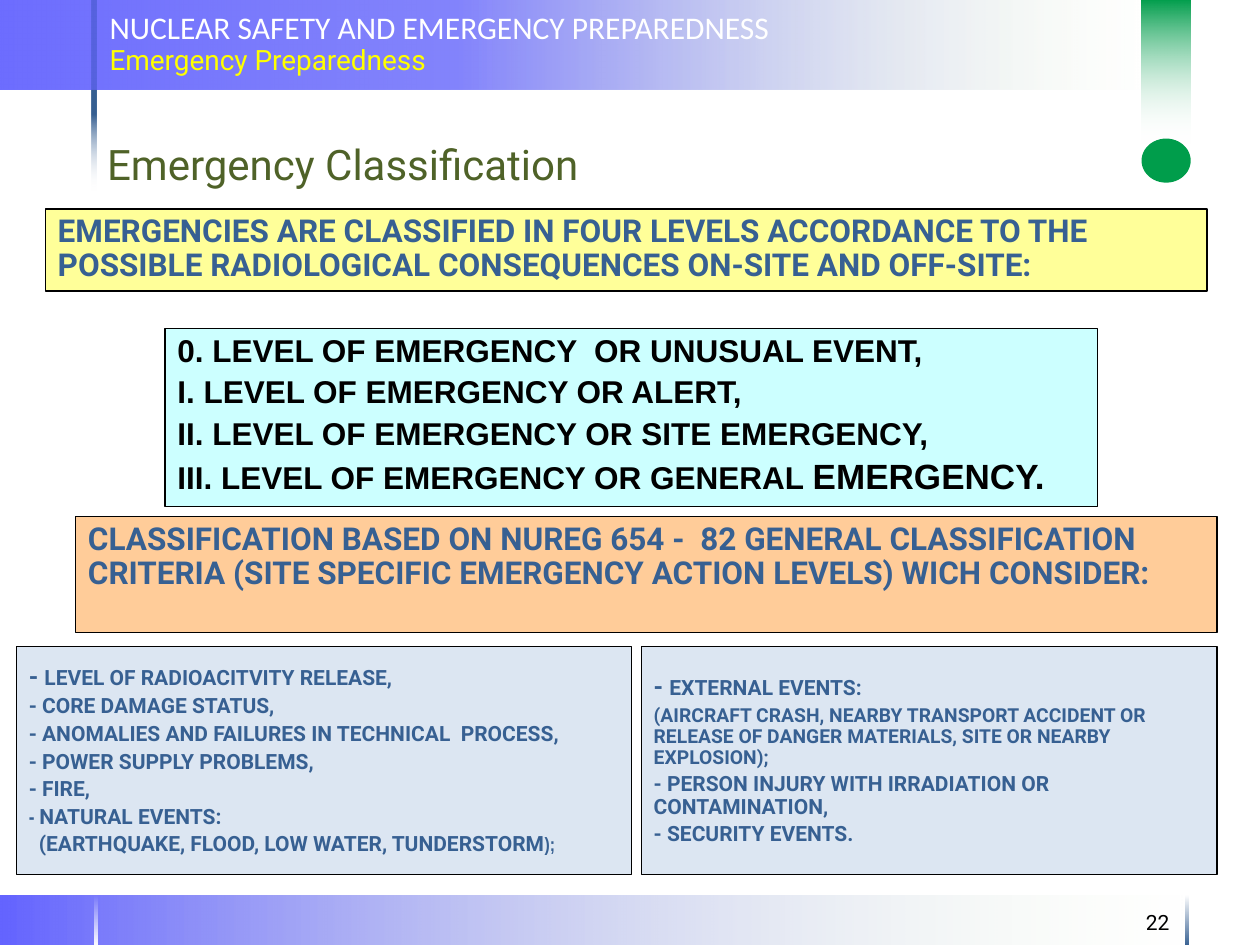
from lxml import etree
from pptx import Presentation
from pptx.dml.color import RGBColor
from pptx.enum.shapes import MSO_SHAPE
from pptx.enum.text import MSO_ANCHOR, PP_ALIGN
from pptx.oxml.ns import qn
from pptx.util import Inches, Pt

RECT, OVAL = MSO_SHAPE.RECTANGLE, MSO_SHAPE.OVAL
TOP, MIDDLE, BOTTOM = MSO_ANCHOR.TOP, MSO_ANCHOR.MIDDLE, MSO_ANCHOR.BOTTOM
LEFT, RIGHT = PP_ALIGN.LEFT, PP_ALIGN.RIGHT
COLORS = {
    "violet": "6464FF", "mist": "E1F1CF", "white": "FFFFFF", "navy": "376092",
    "green": "009D4B", "olive": "4F6228", "yellow": "FFFF00", "black": "000000",
    "pale_blue": "DCE6F2", "cream": "FFFF99", "peach": "FFCC99", "aqua": "CCFFFF",
}
DOWN, UP, ACROSS = 90, 270, 0


def rgb(name):
    return RGBColor.from_string(COLORS[name])


def place(shape, box):
    shape.left, shape.top, shape.width, shape.height = (Inches(side) for side in box)


def write_text(shape, paragraphs, size=12, font="Roboto", color="navy", bold=False,
               align=LEFT, anchor=TOP, spacing=1.0, gap=0, insets=(0.1, 0.05, 0.1, 0.05)):
    """Each paragraph is a list of (text, overrides) spans; 'indent' is in inches."""
    frame = shape.text_frame
    frame.word_wrap = True
    frame.vertical_anchor = anchor
    (frame.margin_left, frame.margin_top,
     frame.margin_right, frame.margin_bottom) = (Inches(side) for side in insets)
    for index, spans in enumerate(paragraphs):
        para = frame.paragraphs[0] if index == 0 else frame.add_paragraph()
        para.alignment, para.line_spacing = align, spacing
        para.space_before = Pt(gap if index else 0)
        for text, changes in spans:
            if "indent" in changes:
                para._p.get_or_add_pPr().set("marL", str(Inches(changes["indent"])))
            span = para.add_run()
            span.text = text
            span.font.size = Pt(changes.get("size", size))
            span.font.name = changes.get("font", font)
            span.font.bold = bold
            span.font.color.rgb = rgb(changes.get("color", color))


def add_block(page, box, fill, outlined=False, kind=RECT):
    shape = page.shapes.add_shape(kind, *(Inches(side) for side in box))
    shape.shadow.inherit = False
    shape.fill.solid()
    shape.fill.fore_color.rgb = rgb(fill)
    if outlined:
        shape.line.color.rgb = rgb("black")
        shape.line.width = Pt(0.75)
    else:
        shape.line.fill.background()
    return shape


def add_gradient(page, box, angle, *stops):
    """Each stop is (position, color, opacity), in percent."""
    shape = add_block(page, box, "white")
    solid = shape._element.spPr.find(qn("a:solidFill"))
    gradient = etree.Element(qn("a:gradFill"), rotWithShape="1")
    stop_list = etree.SubElement(gradient, qn("a:gsLst"))
    for position, color, opacity in stops:
        stop = etree.SubElement(stop_list, qn("a:gs"), pos=str(position * 1000))
        tint = etree.SubElement(stop, qn("a:srgbClr"), val=COLORS[color])
        etree.SubElement(tint, qn("a:alpha"), val=str(opacity * 1000))
    etree.SubElement(gradient, qn("a:lin"), ang=str(angle * 60000), scaled="0")
    solid.getparent().replace(solid, gradient)
    return shape


def add_header(page, box):
    left, top, width, height = box
    add_gradient(page, box, ACROSS, (0, "violet", 80), (100, "mist", 0))
    add_gradient(page, (left + 0.73, top, 0.04, 1.51), DOWN,
                 (60, "navy", 100), (100, "white", 0))
    add_gradient(page, (left + width, top, 0.39, 1.14), UP,
                 (0, "white", 0), (100, "green", 100))
    # Plain emblem under the green ribbon
    add_block(page, (left + width, top + 1.1, 0.39, 0.35), "green", kind=OVAL)
    band = add_gradient(page, box, ACROSS, (40, "violet", 70), (100, "mist", 0))
    write_text(band, [
        [("NUCLEAR SAFETY AND EMERGENCY PREPAREDNESS",
          {"size": 18, "font": "Calibri", "color": "white"})],
        [("Emergency Preparedness", {"color": "yellow"})],
    ], size=16, anchor=MIDDLE, spacing=0.9, insets=(0.87, 0.05, 0.1, 0.05))


def add_footer(page, box, number):
    left, top, width, height = box
    add_gradient(page, box, ACROSS, (0, "violet", 100), (100, "mist", 0))
    for offset, color in ((0.75, "white"), (width, "navy")):
        add_gradient(page, (left + offset, top, 0.02, height), DOWN,
                     (0, color, 0), (100, color, 100))
    holder = page.shapes.add_textbox(0, 0, 0, 0)
    place(holder, (left + width - 1.46, top + 0.03, 1.43, 0.36))
    write_text(holder, [[(number, {})]], color="black", align=RIGHT, anchor=MIDDLE,
               insets=(0.1, 0, 0.1, 0))


def add_title(page, box, text):
    place(page.shapes.title, box)
    write_text(page.shapes.title, [[(text, {})]], size=24, color="olive", anchor=BOTTOM)


def add_panel(page, box, fill, paragraphs, **text_format):
    panel = add_block(page, box, fill, outlined=True)
    write_text(panel, paragraphs, bold=True, spacing=0.9, **text_format)


def add_criteria(page, box):
    left, top, width, height = box
    left_width, gutter = 4.88, 0.08
    dash = ("- ", {"size": 14})
    narrow = {"font": "Arial Narrow"}
    plant_events = [
        [dash, ("LEVEL OF RADIOACITVITY RELEASE,", {})],
        [("- CORE DAMAGE STATUS,", {})],
        [("- ANOMALIES AND FAILURES IN TECHNICAL  PROCESS,", {})],
        [("- POWER SUPPLY PROBLEMS,", {})],
        [("- FIRE,", {})],
        [("- ", narrow), ("NATURAL EVENTS:", {})],
        [("(EARTHQUAKE, FLOOD, LOW WATER, TUNDERSTORM", {"indent": 0.08}),
         (");", {"size": 11, **narrow})],
    ]
    outside_events = [
        [dash, ("EXTERNAL EVENTS:", {})],
        [("(AIRCRAFT CRASH, NEARBY TRANSPORT ACCIDENT OR RELEASE OF DANGER MATERIALS, "
          "SITE OR NEARBY EXPLOSION);", {"size": 11})],
        [("- PERSON INJURY WITH IRRADIATION OR CONTAMINATION,", {})],
        [("- SECURITY EVENTS.", {})],
    ]
    right_left = left + left_width + gutter
    columns = ((left, left_width, plant_events),
               (right_left, left + width - right_left, outside_events))
    for column_left, column_width, events in columns:
        add_panel(page, (column_left, top, column_width, height), "pale_blue", events,
                  anchor=MIDDLE, gap=2.8)


def main():
    deck = Presentation()
    deck.slide_width, deck.slide_height = Inches(10), Inches(7.5)
    page = deck.slides.add_slide(deck.slide_layouts[5])

    # Frame and title
    add_footer(page, (0, 7.11, 9.41, 0.39), "22")
    add_header(page, (0, 0, 9.06, 0.71))
    add_title(page, (0.75, 0.71, 8.31, 0.84), "Emergency Classification")

    # Criteria and statements
    add_criteria(page, (0.13, 5.13, 9.53, 1.81))
    add_panel(page, (0.36, 1.66, 9.22, 0.65), "cream", [[(
        "EMERGENCIES ARE CLASSIFIED IN FOUR LEVELS ACCORDANCE TO THE POSSIBLE "
        "RADIOLOGICAL CONSEQUENCES ON-SITE AND OFF-SITE:", {})]], size=18)
    add_panel(page, (0.6, 4.1, 9.06, 0.92), "peach", [[(
        "CLASSIFICATION BASED ON NUREG 654 -  82 GENERAL CLASSIFICATION CRITERIA "
        "(SITE SPECIFIC EMERGENCY ACTION LEVELS) WICH CONSIDER:", {})]], size=18)

    # Four levels
    add_panel(page, (1.31, 2.61, 7.4, 1.41), "aqua", [
        [("0. LEVEL OF EMERGENCY  OR UNUSUAL EVENT,", {})],
        [("I. LEVEL OF EMERGENCY OR ALERT,", {})],
        [("II. LEVEL OF EMERGENCY OR SITE EMERGENCY,", {})],
        [("III. LEVEL OF EMERGENCY OR GENERAL ", {}), ("EMERGENCY.", {"size": 20})],
    ], size=18, font="Arial", color="black", gap=4.2)

    deck.save("out.pptx")


if __name__ == "__main__":
    main()
